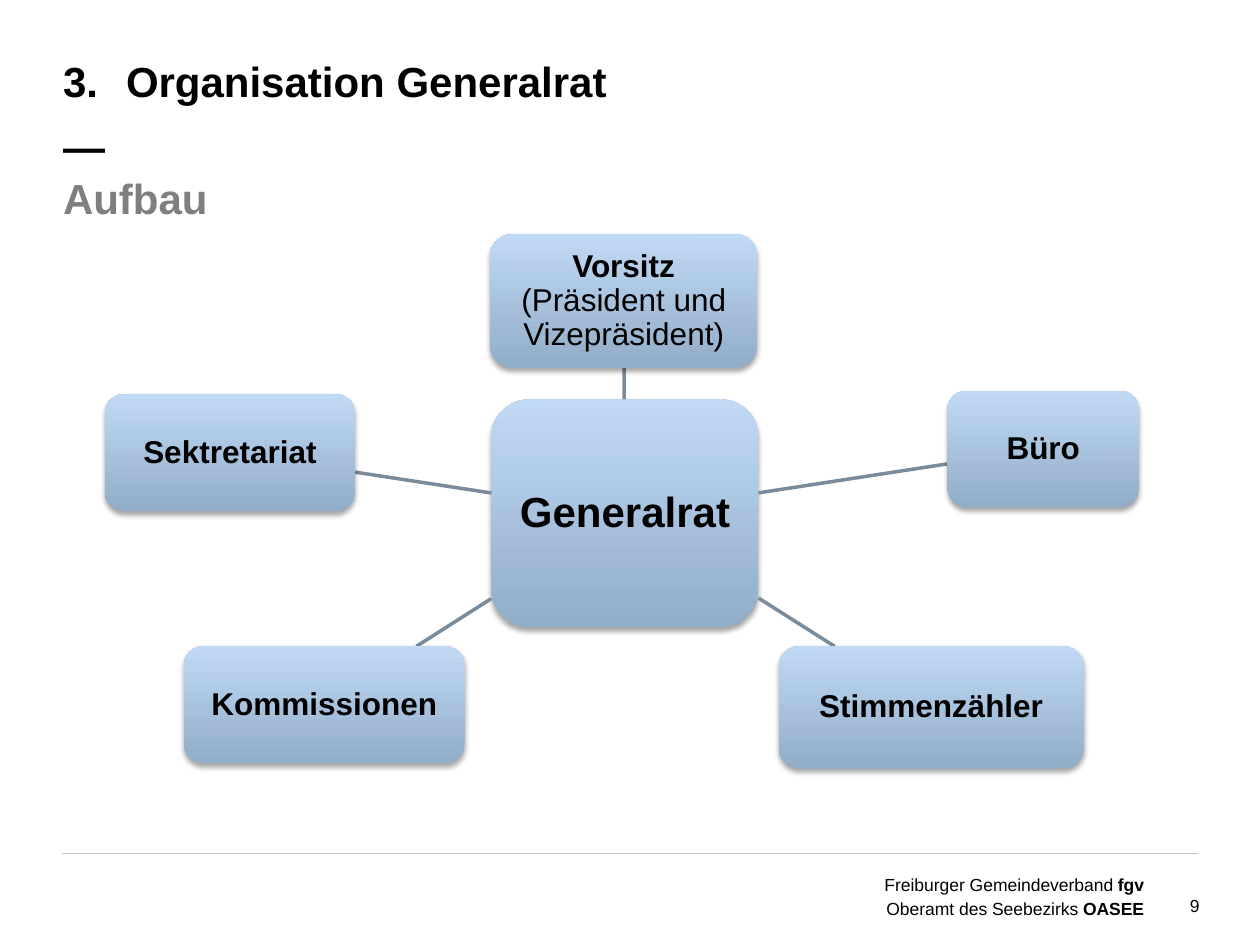
"""Build the organisation slide: a hub with five linked bodies."""
from lxml import etree
from pptx import Presentation, util as u
from pptx.dml.color import RGBColor
from pptx.enum import shapes, text
from pptx.oxml.ns import qn

THEME = dict(font="Arial", ink="000000", grey="7F7F7F", rule="C0C0C0", link="7A8B9B",
             low="92ADC8", high="C0DAF6", head=24, body=18, foot=10)

TITLE = [[("3.\tOrganisation Generalrat\v—", True)]]
TOPIC = [[("Aufbau", True)]]
FOOT = [[("Freiburger Gemeindeverband ", False), ("fgv", True)],
        [("Oberamt des Seebezirks ", False), ("OASEE", True)]]
PAGE = [[("9", False)]]

HUB = ([("Generalrat", True)], (3.9, 3.17, 2.12, 1.81))
NODES = [
    ([("Vorsitz", True), (" (Präsident und Vizepräsident)", False)], (3.89, 1.86, 2.12, 1.06)),
    ([("Stimmenzähler", True)], (6.18, 5.13, 2.42, 0.97)),
    ([("Büro", True)], (7.52, 3.1, 1.52, 0.93)),
    ([("Sektretariat", True)], (0.83, 3.13, 1.99, 0.93)),
    ([("Kommissionen", True)], (1.46, 5.13, 2.23, 0.93)),
]


def color(key):
    return RGBColor.from_string(THEME[key])


def write(frame, paras, size, ink="ink", align="LEFT", pad=0, space=None):
    frame.word_wrap = True
    frame.margin_left = frame.margin_right = u.Inches(pad)
    frame.margin_top = frame.margin_bottom = u.Inches(pad)
    for i, parts in enumerate(paras):
        para = frame.add_paragraph() if i else frame.paragraphs[0]
        para.alignment = getattr(text.PP_ALIGN, align)
        if space:
            para.line_spacing = space
        para.text = parts[0][0]
        for words, _ in parts[1:]:
            para.add_run().text = words
        bolds = [b for _, b in parts]
        for j, run in enumerate(para.runs):
            font = run.font
            font.name, font.size = THEME["font"], u.Pt(THEME[size])
            font.bold = bolds[min(j, len(bolds) - 1)]
            font.color.rgb = color(ink)


def label(slide, at, paras, size, **look):
    box = slide.shapes.add_textbox(*map(u.Inches, at))
    write(box.text_frame, paras, size, **look)
    return box


def line(slide, start, end, ink, width):
    ends = map(u.Inches, (*start, *end))
    rule = slide.shapes.add_connector(shapes.MSO_CONNECTOR.STRAIGHT, *ends)
    rule.line.color.rgb = color(ink)
    rule.line.width = u.Pt(width)
    etree.SubElement(rule._element.spPr, qn("a:effectLst"))


def shade(shape):
    shape.shadow.inherit = False
    glow = shape._element.spPr.find(qn("a:effectLst"))
    outer = etree.SubElement(glow, qn("a:outerShdw"), blurRad=str(u.Pt(3.1)),
                             dist=str(u.Pt(1.8)), dir="5400000", rotWithShape="0")
    tint = etree.SubElement(outer, qn("a:srgbClr"), val=THEME["ink"])
    etree.SubElement(tint, qn("a:alpha"), val="35000")


def node(slide, parts, at, size, pad):
    box = slide.shapes.add_shape(shapes.MSO_SHAPE.ROUNDED_RECTANGLE, *map(u.Inches, at))
    shade(box)
    box.line.fill.background()
    box.fill.gradient()
    box.fill.gradient_angle = 90
    for stop, key in zip(box.fill.gradient_stops, ("low", "high")):
        stop.color.rgb = color(key)
    box.text_frame.vertical_anchor = text.MSO_ANCHOR.MIDDLE
    write(box.text_frame, [parts], size, align="CENTER", pad=pad, space=0.9)


def mid(at):
    x, y, w, h = at
    return x + w / 2, y + h / 2


def edge(at, goal):
    """Point where the ray from the box centre to goal leaves the box."""
    (x, y), (gx, gy) = mid(at), goal
    dx, dy = gx - x, gy - y
    part = 1 / max(abs(dx) / (at[2] / 2), abs(dy) / (at[3] / 2))
    return x + dx * part, y + dy * part


def main():
    deck = Presentation()
    deck.slide_width, deck.slide_height = u.Inches(10), u.Inches(7.5)
    slide = deck.slides.add_slide(deck.slide_layouts[6])

    label(slide, (9.08, 7.1, 0.44, 0.17), PAGE, "foot", align="RIGHT")
    label(slide, (6.91, 6.92, 2.17, 0.35), FOOT, "foot", align="RIGHT", space=u.Pt(13.4))
    line(slide, (0.49, 6.77), (9.51, 6.77), "rule", 0.25)

    title = label(slide, (0.5, 0.33, 9.01, 0.98), TITLE, "head", space=u.Pt(37))
    props = title.text_frame.paragraphs[0]._p.get_or_add_pPr()
    tabs = etree.SubElement(props, qn("a:tabLst"))
    etree.SubElement(tabs, qn("a:tab"), pos=str(u.Inches(0.5)), algn="l")
    label(slide, (0.5, 1.37, 9.01, 0.4), TOPIC, "head", ink="grey")

    node(slide, *HUB, "head", 0.07)
    for parts, at in NODES:
        line(slide, edge(HUB[1], mid(at)), edge(at, mid(HUB[1])), "link", 2)
        node(slide, parts, at, "body", 0.05)
    deck.save("out.pptx")


if __name__ == "__main__":
    main()
